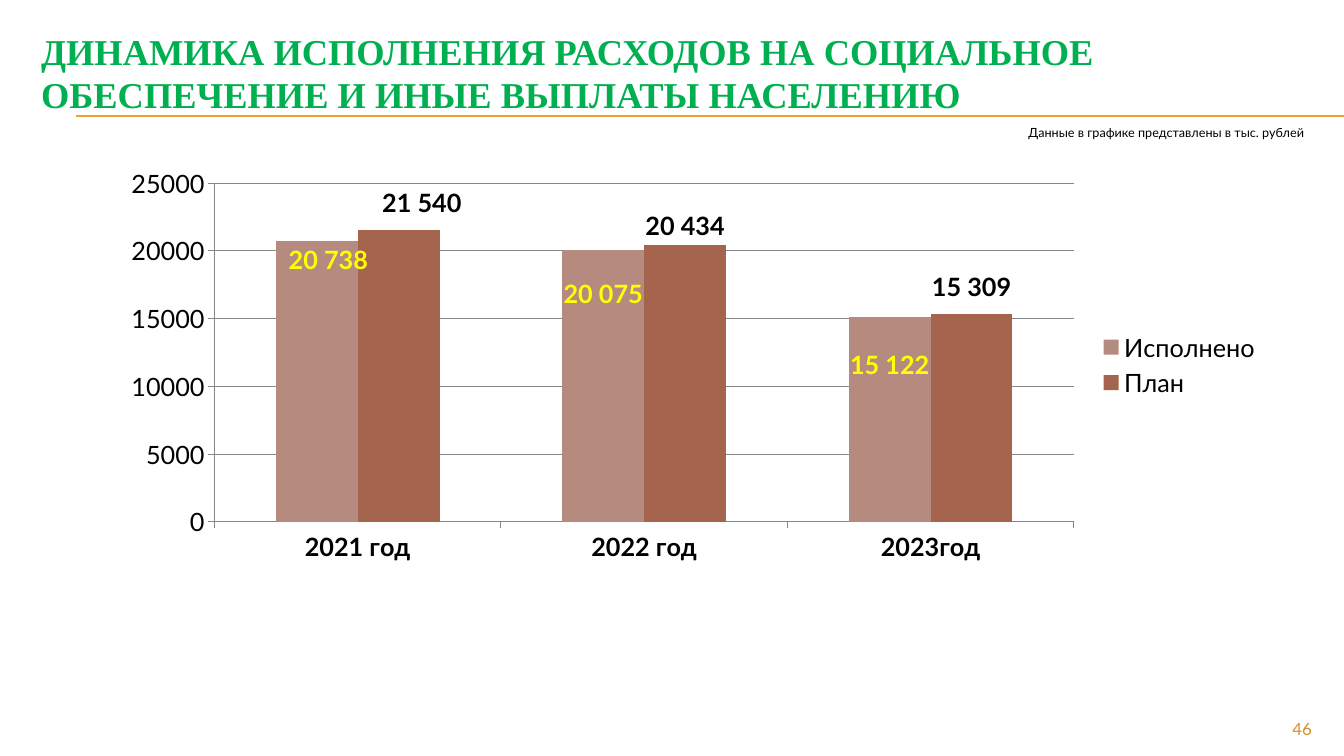
import pptx
import pptx.chart.data
import pptx.dml.color
import pptx.enum.chart
import pptx.enum.shapes
import pptx.enum.text
import pptx.oxml
import pptx.oxml.ns
import pptx.util
from pptx.util import Inches

CHART_NS = pptx.oxml.ns.nsdecls("c")
LEADER_NS = "http://schemas.microsoft.com/office/drawing/2012/chart"
LEADER_URI = "{CE6537A1-D6FC-4f65-9D91-7224C49458BB}"


def color(value):
    return pptx.dml.color.RGBColor.from_string(value)


def manual_layout(inner=False, **fractions):
    target = '<c:layoutTarget val="inner"/>' if inner else ""
    modes = '<c:xMode val="edge"/><c:yMode val="edge"/>' if inner else ""
    values = "".join(f'<c:{key} val="{value}"/>' for key, value in fractions.items())
    return pptx.oxml.parse_xml(
        f"<c:layout {CHART_NS}><c:manualLayout>{target}{modes}{values}"
        "</c:manualLayout></c:layout>"
    )


class BudgetSlide:
    body_font = "Lato"
    title_font = "Times New Roman"
    text_color = "000000"
    accent = "F0A22E"
    grid_color = "878787"

    def __init__(self, slide):
        self.slide = slide

    def style(self, font, size, value, bold=False, name=None):
        font.name = name or self.body_font
        font.size = pptx.util.Pt(size)
        font.bold = bold
        font.color.rgb = color(value)

    def text(self, box, wording, size, value, bold=False, name=None, align="LEFT",
             anchor="TOP", wrap=True):
        frame = self.slide.shapes.add_textbox(*map(Inches, box)).text_frame
        frame.word_wrap = wrap
        frame.vertical_anchor = getattr(pptx.enum.text.MSO_ANCHOR, anchor)
        paragraph = frame.paragraphs[0]
        paragraph.alignment = getattr(pptx.enum.text.PP_ALIGN, align)
        run = paragraph.add_run()
        run.text = wording
        self.style(run.font, size, value, bold, name)

    def rule(self, left, right, y):
        line = self.slide.shapes.add_connector(
            pptx.enum.shapes.MSO_CONNECTOR.STRAIGHT,
            Inches(left), Inches(y), Inches(right), Inches(y))
        line.line.color.rgb = color(self.accent)
        line.line.width = pptx.util.Pt(0.75)
        line._element.spPr.append(pptx.oxml.parse_xml(
            f'<a:effectLst {pptx.oxml.ns.nsdecls("a")}/>'))

    def columns(self, box, years, spending):
        data = pptx.chart.data.CategoryChartData()
        data.categories = years
        for name, values, *_ in spending:
            data.add_series(name, values)
        chart = self.slide.shapes.add_chart(
            pptx.enum.chart.XL_CHART_TYPE.COLUMN_CLUSTERED,
            *map(Inches, box), data).chart
        self.style(chart.font, 18, self.text_color)
        chart.has_title = False
        chart.has_legend = True
        chart.legend.position = pptx.enum.chart.XL_LEGEND_POSITION.RIGHT
        chart.legend.include_in_layout = False
        self.style(chart.legend.font, 18, self.text_color)
        self.axes(chart)
        plot = chart.plots[0]
        plot.gap_width = 150
        plot.overlap = 0
        plot.vary_by_categories = False
        for series, (_, _, fill, label_color, position, shifts) in zip(plot.series, spending):
            series.format.fill.solid()
            series.format.fill.fore_color.rgb = color(fill)
            self.labels(series, label_color, position, shifts)
        plot_area = chart._chartSpace.chart.plotArea
        for automatic in plot_area.findall(pptx.oxml.ns.qn("c:layout")):
            plot_area.remove(automatic)
        plot_area.insert(0, manual_layout(True, x=0.09, y=0.06, w=0.74, h=0.82))

    def axes(self, chart):
        for axis, bold in ((chart.category_axis, True), (chart.value_axis, False)):
            self.style(axis.tick_labels.font, 18, self.text_color, bold)
            axis.major_tick_mark = pptx.enum.chart.XL_TICK_MARK.OUTSIDE
            axis.format.line.color.rgb = color(self.grid_color)
        amounts = chart.value_axis
        amounts.minimum_scale, amounts.maximum_scale = 0, 25000
        amounts.major_unit = 5000
        amounts.has_major_gridlines = True
        amounts.major_gridlines.format.line.color.rgb = color(self.grid_color)

    def labels(self, series, value, position, shifts):
        place = getattr(pptx.enum.chart.XL_LABEL_POSITION, position)
        labels = series.data_labels
        labels.show_value = True
        labels.position = place
        self.style(labels.font, 18, value, True)
        for index, amount in enumerate(series.values):
            label = series.points[index].data_label
            run = label.text_frame.paragraphs[0].add_run()
            run.text = f"{amount:,.0f}".replace(",", " ")
            self.style(run.font, 18, value, True)
            label.position = place
        for entry, (x, y) in zip(series._element.iter(pptx.oxml.ns.qn("c:dLbl")), shifts):
            entry.insert(1, manual_layout(x=x, y=y))
        self.hide_leaders(series._element.find(pptx.oxml.ns.qn("c:dLbls")))

    def hide_leaders(self, group):
        for leader in group.findall(pptx.oxml.ns.qn("c:showLeaderLines")):
            leader.set("val", "0")
        group.append(pptx.oxml.parse_xml(
            f'<c:extLst {CHART_NS}><c:ext uri="{LEADER_URI}" xmlns:c15="{LEADER_NS}">'
            '<c15:showLeaderLines val="0"/></c:ext></c:extLst>'))


def main():
    deck = pptx.Presentation()
    deck.slide_width, deck.slide_height = Inches(13.33), Inches(7.5)
    page = BudgetSlide(deck.slides.add_slide(deck.slide_layouts[6]))
    for y in (1.15, 1.16):
        page.rule(0.75, 13.33, y)
    page.text(
        (0.31, 0.22, 12.63, 1),
        "ДИНАМИКА ИСПОЛНЕНИЯ РАСХОДОВ НА СОЦИАЛЬНОЕ ОБЕСПЕЧЕНИЕ И ИНЫЕ ВЫПЛАТЫ НАСЕЛЕНИЮ",
        26, "00B050", bold=True, name=page.title_font, anchor="MIDDLE")
    page.columns(
        (1.09, 1.57, 11.52, 4.1),
        ("2021 год", "2022 год", "2023год"),
        (
            ("Исполнено", (20738, 20075, 15122), "B58B80", "FFFF00", "INSIDE_END",
             ((0.01, 0), (0, 0.06), (0, 0.07))),
            ("План", (21540, 20434, 15309), "A5644E", page.text_color, "OUTSIDE_END",
             ((0.02, -0.02), (0, 0), (0, -0.02))),
        ))
    page.text((12, 7.08, 1.11, 0.27), "46", 12, "D48F29", align="RIGHT")
    page.text((10.03, 1.19, 3, 0.25), "Данные в графике представлены в тыс. рублей",
              9, page.text_color, align="RIGHT", wrap=False)
    deck.save("out.pptx")


if __name__ == "__main__":
    main()
